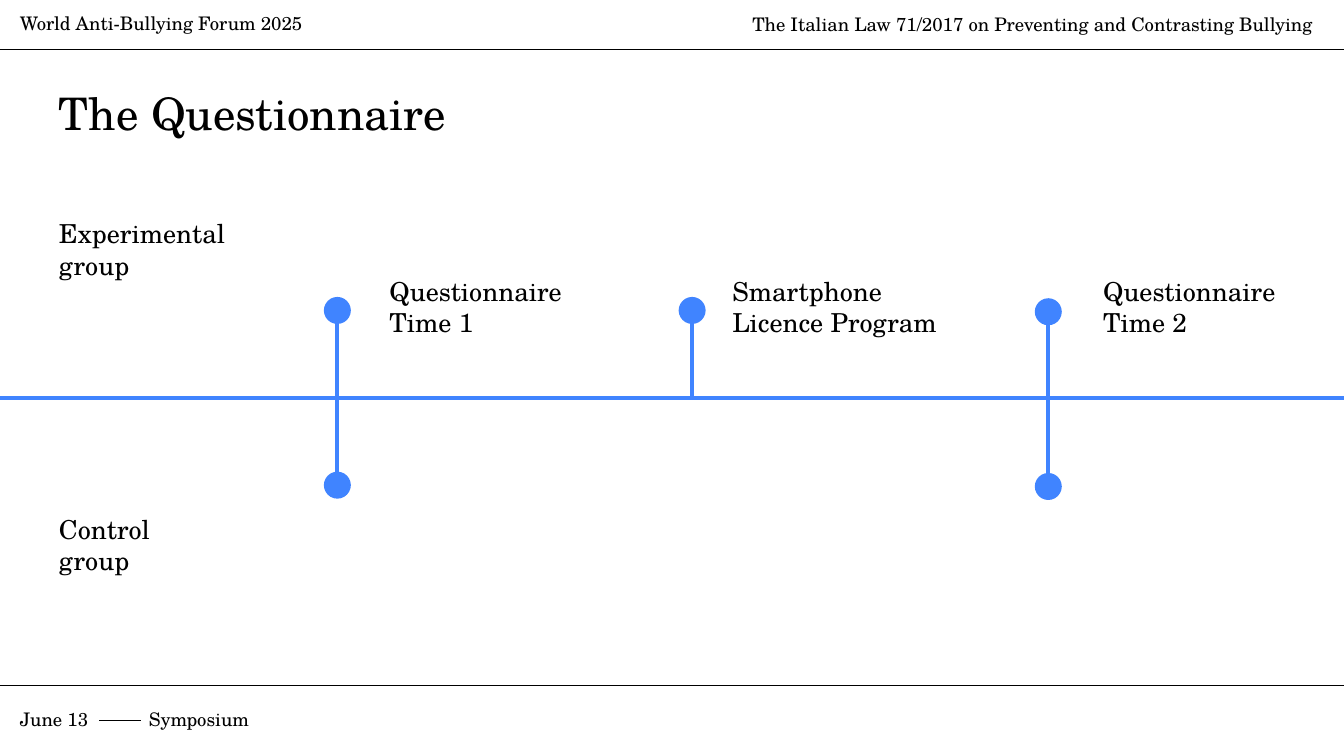
from lxml import etree
from pptx import Presentation
from pptx.dml.color import RGBColor
from pptx.enum import shapes, text
from pptx.oxml.ns import qn
from pptx.util import Inches, Pt

THEME = {
    "font": "TeX Gyre Schola",
    "ink": RGBColor(0, 0, 0),
    "accent": RGBColor(0x40, 0x84, 0xFF),
    "small": 10, "label": 14, "title": 24,
    "rule": 0.75, "outline": 1.5, "stem": 2.25,
}
LEFT, RIGHT = text.PP_ALIGN.LEFT, text.PP_ALIGN.RIGHT
WIDTH = 10
HEIGHT = WIDTH * 9 / 16
TIMELINE_Y = 2.96
DOT = 0.18
FOOTER_TAB = 0.96

RUNNING_TEXTS = [
    ("World Anti-Bullying Forum 2025", (0.05, 0.01, 3.03, 0.16), LEFT, 1),
    ("The Italian Law 71/2017 on Preventing and Contrasting Bullying",
     (5.14, 0.01, 4.72, 0.16), RIGHT, 1.15),
    ("June 13\tSymposium", (0.05, 5.18, 2.17, 0.3), LEFT, 1),
]
RULES = [(-0.02, 10.02, 0.37), (-0.02, 10.02, 5.1), (0.74, 1.05, 5.36)]
TITLE = ("The Questionnaire", (0.34, 0.54, 9.32, 0.65))
GROUPS = [
    ("Experimental group", (0.34, 1.52, 1.74, 0.67)),
    ("Control group", (0.34, 3.72, 1.44, 0.67)),
]
MILESTONES = [
    {"label": "Questionnaire\nTime 1", "at": (2.8, 1.95, 1.74, 0.67),
     "x": 2.51, "dots": (2.31, 3.61)},
    {"label": "Smartphone\vLicence Program", "at": (5.35, 1.95, 2.35, 0.67),
     "x": 5.15, "dots": (2.31,)},
    {"label": "Questionnaire\nTime 2", "at": (8.11, 1.95, 1.74, 0.67),
     "x": 7.8, "dots": (2.32, 3.62)},
]


def add_tab_stop(para, position):
    stops = etree.SubElement(para._p.get_or_add_pPr(), qn("a:tabLst"))
    etree.SubElement(stops, qn("a:tab"), pos=str(Inches(position)), algn="l")


def add_text(page, words, at, size, align=LEFT, spacing=1):
    box = page.shapes.add_textbox(*map(Inches, at))
    frame = box.text_frame
    frame.text = words
    frame.word_wrap = True
    for side in ("left", "right", "top", "bottom"):
        setattr(frame, f"margin_{side}", Inches(0.1))
    style = {"name": THEME["font"], "size": Pt(THEME[size])}
    for para in frame.paragraphs:
        para.alignment = align
        para.line_spacing = spacing
        if "\t" in para.text:
            add_tab_stop(para, FOOTER_TAB)
        for span in para.runs:
            for name, value in style.items():
                setattr(span.font, name, value)
            span.font.color.rgb = THEME["ink"]


def add_line(page, start, end, color, weight):
    line = page.shapes.add_connector(
        shapes.MSO_CONNECTOR.STRAIGHT, *map(Inches, start + end))
    line.line.color.rgb = THEME[color]
    line.line.width = Pt(THEME[weight])
    etree.SubElement(line._element.spPr, qn("a:effectLst"))


def add_dot(page, x, y):
    frame = (x - DOT / 2, y - DOT / 2, DOT, DOT)
    dot = page.shapes.add_shape(shapes.MSO_SHAPE.OVAL, *map(Inches, frame))
    dot.shadow.inherit = False
    dot.fill.solid()
    dot.fill.fore_color.rgb = THEME["accent"]
    dot.line.color.rgb = THEME["accent"]
    dot.line.width = Pt(THEME["outline"])


def main():
    deck = Presentation()
    deck.slide_width, deck.slide_height = Inches(WIDTH), Inches(HEIGHT)
    page = deck.slides.add_slide(deck.slide_layouts[6])

    for left, right, y in RULES:
        add_line(page, (left, y), (right, y), "ink", "rule")
    for words, at, align, spacing in RUNNING_TEXTS:
        add_text(page, words, at, "small", align, spacing)
    add_text(page, *TITLE, "title")
    for words, at in GROUPS:
        add_text(page, words, at, "label")

    add_line(page, (-0.01, TIMELINE_Y), (10.01, TIMELINE_Y), "accent", "stem")
    for milestone in MILESTONES:
        x, dots = milestone["x"], milestone["dots"]
        end = dots[1] if len(dots) > 1 else TIMELINE_Y
        add_line(page, (x, dots[0]), (x, end), "accent", "stem")
        for y in dots:
            add_dot(page, x, y)
        add_text(page, milestone["label"], milestone["at"], "label")

    deck.save("out.pptx")


if __name__ == "__main__":
    main()
